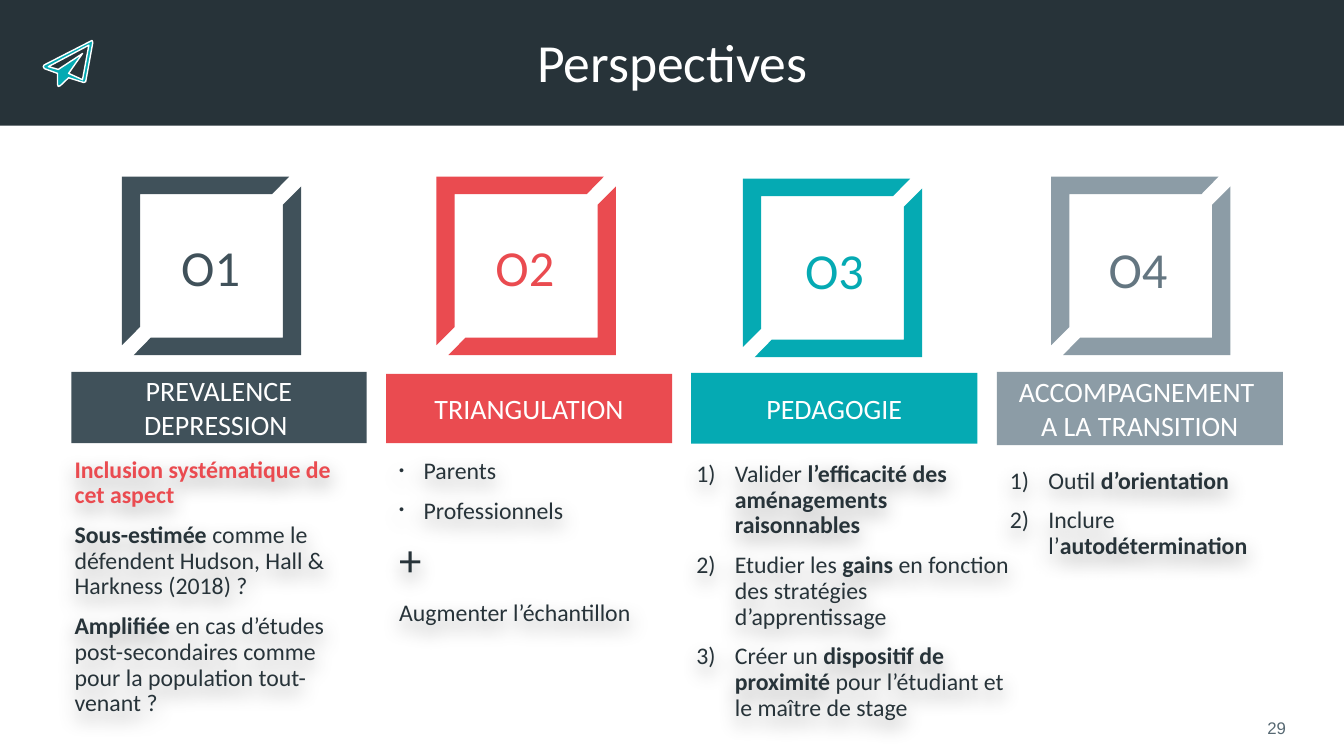
"""Build the "Perspectives" slide: four numbered, coloured columns of ideas."""
from lxml.etree import SubElement
from pptx import Presentation
from pptx.dml.color import RGBColor
from pptx.enum.shapes import MSO_SHAPE
from pptx.enum.text import MSO_ANCHOR, PP_ALIGN
from pptx.oxml.ns import qn
from pptx.util import Cm, Pt

INK = RGBColor(0x27, 0x33, 0x39)
SLATE = RGBColor(0x40, 0x51, 0x5A)
RED = RGBColor(0xEA, 0x4B, 0x50)
TEAL = RGBColor(0x05, 0xAA, 0xB3)
GREY = RGBColor(0x8C, 0x9C, 0xA6)
DARK_GREY = RGBColor(0x64, 0x76, 0x81)
PAGE_GREY = RGBColor(0x57, 0x69, 0x73)
WHITE = RGBColor(0xFF, 0xFF, 0xFF)

TITLE = "Perspectives"
PAGE = "29"
COLUMNS = [
    {
        "number": "O1", "heading": ["PREVALENCE DEPRESSION "],
        "color": SLATE, "number_color": SLATE,
        "frame": (3.07, 4.45), "number_at": (4.09, 5.82),
        "banner": (1.8, 9.37, 7.44, 1.8), "body": (1.75, 11.4, 7.57, 6.76),
        "ideas": [
            ("", 17, RED, "**Inclusion systématique de cet aspect**"),
            ("", 17, INK, "**Sous-estimée** comme le défendent Hudson, Hall & Harkness (2018) ?"),
            ("", 17, INK, "**Amplifiée** en cas d’études post-secondaires comme pour la population tout-venant ?"),
        ],
    },
    {
        "number": "O2", "heading": ["TRIANGULATION"],
        "color": RED, "number_color": RED,
        "frame": (11, 4.45), "number_at": (12.01, 5.82),
        "banner": (9.73, 9.42, 7.21, 1.75), "body": (9.93, 11.43, 6.81, 4.47),
        "ideas": [
            ("dot", 17, INK, " Parents"),
            ("dot", 17, INK, " Professionnels"),
            ("", 32, INK, "+"),
            ("", 17, INK, "Augmenter l’échantillon"),
        ],
    },
    {
        "number": "O3", "heading": ["PEDAGOGIE"],
        "color": TEAL, "number_color": TEAL,
        "frame": (18.72, 4.5), "number_at": (19.81, 5.89),
        "banner": (17.42, 9.4, 7.21, 1.78), "body": (17.42, 11.51, 8.23, 6.76),
        "ideas": [
            ("count", 17, INK, "Valider **l’efficacité des aménagements raisonnables**"),
            ("count", 17, INK, "Etudier les **gains** en fonction des stratégies d’apprentissage"),
            ("count", 17, INK, "Créer un **dispositif de proximité **pour l’étudiant et le maître de stage"),
        ],
    },
    {
        "number": "O4", "heading": ["ACCOMPAGNEMENT ", "A LA TRANSITION"],
        "color": GREY, "number_color": DARK_GREY,
        "frame": (26.49, 4.45), "number_at": (27.46, 5.87),
        "banner": (25.12, 9.37, 7.21, 1.85), "body": (25.32, 11.68, 7.21, 2.59),
        "ideas": [
            ("count", 17, INK, "Outil **d’orientation**"),
            ("count", 17, INK, "Inclure l’**autodétermination**"),
        ],
    },
]
FRAME_SIZE = (4.52, 4.5)
FRAME_CORNER = [(0, 0), (4.22, 0), (3.79, 0.44), (0.46, 0.44), (0.46, 3.79), (0, 4.25)]
PLANE = [
    [(2.32, 1.02), (2.34, 1.07), (2.16, 2.06), (2.11, 2.08), (1.73, 1.96), (1.52, 2.16),
     (1.47, 2.18), (1.45, 2.13), (1.45, 1.85), (1.12, 1.73), (1.09, 1.68), (1.11, 1.64)],
    [(2.24, 1.14), (1.22, 1.68), (1.47, 1.75), (2.08, 1.35), (1.73, 1.85), (2.08, 2.01)],
]
INDENTS = {"dot": 0.48, "count": 0.97}


def paint(shape, color, outline=None):
    shape.shadow.inherit = False
    shape.fill.solid()
    shape.fill.fore_color.rgb = color
    if outline is None:
        shape.line.fill.background()
    else:
        shape.line.color.rgb = outline
        shape.line.width = Pt(1)


def outline_shape(shapes, contours, color, outline=None):
    emu = [[(Cm(x), Cm(y)) for x, y in contour] for contour in contours]
    builder = shapes.build_freeform(*emu[0][0], scale=1.0)
    builder.add_line_segments(emu[0][1:], close=True)
    for contour in emu[1:]:
        builder.move_to(*contour[0])
        builder.add_line_segments(contour[1:], close=True)
    paint(builder.convert_to_shape(), color, outline)


def rectangle(shapes, box, color):
    shape = shapes.add_shape(MSO_SHAPE.RECTANGLE, *map(Cm, box))
    paint(shape, color)
    return shape


def prepare(frame, anchor):
    frame.word_wrap = True
    frame.vertical_anchor = anchor
    frame.margin_left = frame.margin_right = Cm(0.13)
    frame.margin_top = frame.margin_bottom = Cm(0.13)
    return frame


def style(run, size, color, bold=False, font="Calibri"):
    run.font.name = font
    run.font.size = Pt(size)
    run.font.color.rgb = color
    run.font.bold = bold


def label(shape, lines, size, color, align=PP_ALIGN.CENTER, anchor=MSO_ANCHOR.MIDDLE, font="Calibri"):
    frame = prepare(shape.text_frame, anchor)
    frame.text = "\n".join(lines)
    for paragraph in frame.paragraphs:
        paragraph.alignment = align
        for run in paragraph.runs:
            style(run, size, color, font=font)


def add_marker(paragraph, marker):
    properties = paragraph._p.get_or_add_pPr()
    indent = Cm(INDENTS[marker])
    properties.set("marL", str(indent))
    properties.set("indent", str(-indent))
    if marker == "dot":
        SubElement(properties, qn("a:buSzPct"), val="60000")
        SubElement(properties, qn("a:buFont"), typeface="Arial")
        SubElement(properties, qn("a:buChar"), char="•")
    else:
        SubElement(properties, qn("a:buFont"), typeface="Calibri")
        SubElement(properties, qn("a:buAutoNum"), type="arabicParenR")


def add_soft_shadow(shape):
    effects = SubElement(shape._element.spPr, qn("a:effectLst"))
    shadow = SubElement(effects, qn("a:outerShdw"), blurRad=str(Cm(0.5)), dist=str(Cm(0.2)),
                        dir="5400000", algn="t", rotWithShape="0")
    black = SubElement(shadow, qn("a:srgbClr"), val="000000")
    SubElement(black, qn("a:alpha"), val="40000")


def write_ideas(shapes, box, ideas):
    body = shapes.add_textbox(*map(Cm, box))
    add_soft_shadow(body)
    frame = prepare(body.text_frame, MSO_ANCHOR.TOP)
    for index, (marker, size, color, idea) in enumerate(ideas):
        paragraph = frame.add_paragraph() if index else frame.paragraphs[0]
        paragraph.line_spacing = 0.9
        paragraph.space_before = Pt(10)
        if marker:
            add_marker(paragraph, marker)
        for position, part in enumerate(idea.split("**")):
            if part:
                run = paragraph.add_run()
                run.text = part
                style(run, size, color, bold=position % 2 == 1)


def draw_column(shapes, column):
    left, top = column["frame"]
    width, height = FRAME_SIZE
    upper = [(left + x, top + y) for x, y in FRAME_CORNER]
    lower = [(left + width - x, top + height - y) for x, y in FRAME_CORNER]
    for corner in (upper, lower):
        outline_shape(shapes, [corner], column["color"])
    number = shapes.add_textbox(*map(Cm, (*column["number_at"], 2.44, 1.73)))
    label(number, [column["number"]], 36, column["number_color"], anchor=MSO_ANCHOR.TOP)
    label(rectangle(shapes, column["banner"], column["color"]), column["heading"], 20, WHITE)
    write_ideas(shapes, column["body"], column["ideas"])


def main():
    deck = Presentation()
    deck.slide_width, deck.slide_height = Cm(33.87), Cm(19.05)
    shapes = deck.slides.add_slide(deck.slide_layouts[6]).shapes
    rectangle(shapes, (0, 0, 33.87, 3.17), INK)
    title = shapes.add_textbox(Cm(2.34), Cm(0.69), Cm(29.21), Cm(1.88))
    label(title, [TITLE], 38.3, WHITE)
    title.text_frame.paragraphs[0].line_spacing = 0.9
    outline_shape(shapes, PLANE, TEAL, WHITE)
    for column in COLUMNS:
        draw_column(shapes, column)
    page = shapes.add_textbox(Cm(31.5), Cm(17.98), Cm(1.04), Cm(0.74))
    label(page, [PAGE], 12, PAGE_GREY, align=PP_ALIGN.RIGHT, font="Arial")
    deck.save("out.pptx")


if __name__ == "__main__":
    main()
